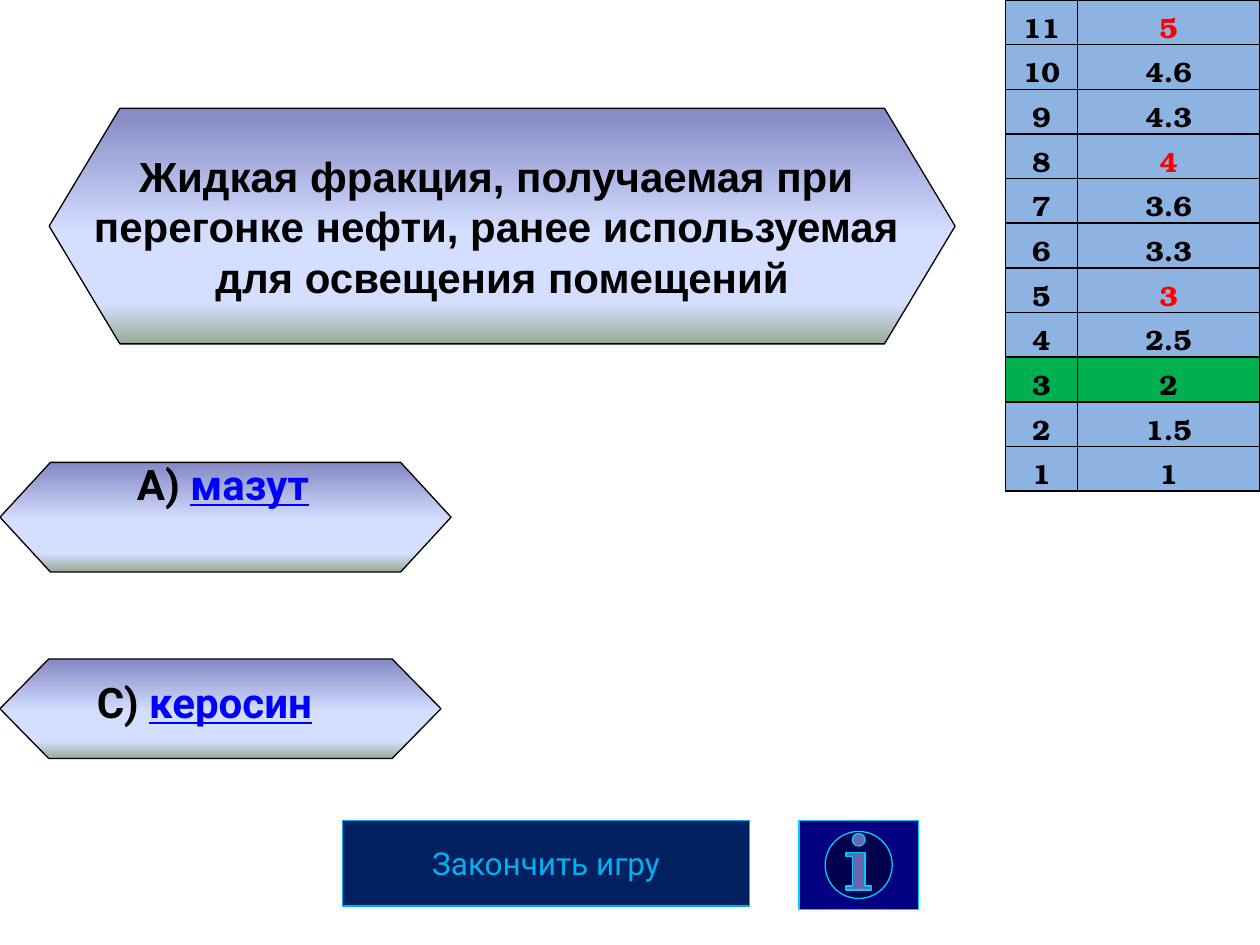
from pptx import Presentation
from pptx.dml.color import RGBColor
from pptx.enum.shapes import MSO_SHAPE as Preset
from pptx.enum.text import MSO_ANCHOR as Anchor, MSO_AUTO_SIZE as AutoSize, PP_ALIGN as Align
from pptx.oxml import parse_xml
from pptx.oxml.ns import nsdecls
from pptx.util import Inches, Pt

COLORS = {
    "black": "000000", "red": "FF0000", "answer": "0000FF",
    "cell": "8DB3E2", "current": "00B050",
    "navy": "002060", "sky": "00B0F0", "info": "000080", "info line": "00CCFF",
}
GRADIENT = [(0, "8488C4"), (53, "D4DEFF"), (83, "D4DEFF"), (100, "96AB94")]

QUESTION = [
    "Жидкая фракция, получаемая при ",
    "перегонке нефти, ранее используемая ",
    "для освещения помещений",
]
QUESTION_BOX = (0.39, 0.86, 7.19, 1.87)
# letter, answer, hexagon box, hexagon corner, text box, alignment
ANSWERS = [
    ("С) ", "керосин", (0, 5.23, 3.5, 0.79), 0.49, (0.67, 5.32, 2.99, 0.5), Align.LEFT),
    ("А) ", "мазут", (0, 3.67, 3.58, 0.87), 0.46, (0.35, 3.59, 2.84, 0.51), Align.CENTER),
]
SCORES = ["5", "4.6", "4.3", "4", "3.6", "3.3", "3", "2.5", "2", "1.5", "1"]
MILESTONES = {"5", "4", "3"}
CURRENT_LEVEL = 3
TABLE_BOX = (7.98, 0, 2.02, 3.9)
LEVEL_COLUMN = 0.57

presentation = Presentation()
presentation.slide_width, presentation.slide_height = Inches(10), Inches(7.5)
slide = presentation.slides.add_slide(presentation.slide_layouts[6])


def rgb(name):
    return RGBColor.from_string(COLORS[name])


def write(frame, paragraphs, font="Roboto", size=24, bold=True, align=Align.CENTER,
          line_spacing=None, space_after=None):
    """Fill a text frame; each paragraph is a list of (text, colour, underline)."""
    for index, runs in enumerate(paragraphs):
        paragraph = frame.add_paragraph() if index else frame.paragraphs[0]
        paragraph.alignment = align
        paragraph.line_spacing = line_spacing
        paragraph.space_after = space_after
        for text, color, underline in runs:
            run = paragraph.add_run()
            run.text = text
            run.font.name, run.font.size = font, Pt(size)
            run.font.bold, run.font.underline = bold, underline
            run.font.color.rgb = rgb(color)


def add_shape(preset, box, line, fill=None):
    shape = slide.shapes.add_shape(preset, *map(Inches, box))
    shape.shadow.inherit = False
    shape.line.color.rgb = rgb(line)
    shape.line.width = Pt(0.75)
    if fill:
        shape.fill.solid()
        shape.fill.fore_color.rgb = rgb(fill)
    shape.text_frame.word_wrap = False
    shape.text_frame.vertical_anchor = Anchor.MIDDLE
    return shape


def add_hexagon(box, corner):
    """Add a hexagon filled from top to bottom with GRADIENT."""
    hexagon = add_shape(Preset.HEXAGON, box, "black")
    hexagon.adjustments[0] = corner
    hexagon.adjustments[1] = 1.1547
    hexagon.fill.gradient()
    hexagon.fill.gradient_angle = 270
    stops = "".join(f'<a:gs pos="{share * 1000}"><a:srgbClr val="{color}"/></a:gs>'
                    for share, color in GRADIENT)
    old_stops = next(hexagon.element.iter("{*}gsLst"))
    old_stops.getparent().replace(
        old_stops, parse_xml(f'<a:gsLst {nsdecls("a")}>{stops}</a:gsLst>'))
    return hexagon


def add_borders(cell):
    properties = cell._tc.get_or_add_tcPr()
    for side in "LRTB":
        properties.append(parse_xml(
            f'<a:ln{side} {nsdecls("a")} w="12700"><a:solidFill>'
            f'<a:srgbClr val="{COLORS["black"]}"/></a:solidFill></a:ln{side}>'))


def add_score_table():
    table = slide.shapes.add_table(len(SCORES), 2, *map(Inches, TABLE_BOX)).table
    table.first_row = table.horz_banding = False
    table.columns[0].width = Inches(LEVEL_COLUMN)
    table.columns[1].width = Inches(TABLE_BOX[2] - LEVEL_COLUMN)
    for row, score in enumerate(SCORES):
        table.rows[row].height = Inches(TABLE_BOX[3] / len(SCORES))
        level = len(SCORES) - row
        score_color = "red" if score in MILESTONES else "black"
        for column, (text, color) in enumerate([(str(level), "black"), (score, score_color)]):
            cell = table.cell(row, column)
            add_borders(cell)
            cell.fill.solid()
            cell.fill.fore_color.rgb = rgb("current" if level == CURRENT_LEVEL else "cell")
            cell.margin_left = cell.margin_right = Inches(0.07)
            cell.margin_top = cell.margin_bottom = 0
            write(cell.text_frame, [[(text, color, False)]], font="TeX Gyre Bonum",
                  size=16, line_spacing=1.15, space_after=Pt(10))


for letter, answer, hexagon_box, corner, text_box, align in ANSWERS:
    add_hexagon(hexagon_box, corner)
    frame = slide.shapes.add_textbox(*map(Inches, text_box)).text_frame
    frame.word_wrap = True
    frame.auto_size = AutoSize.SHAPE_TO_FIT_TEXT
    write(frame, [[(letter, "black", False), (answer, "answer", True)]], align=align)

add_shape(Preset.ACTION_BUTTON_INFORMATION, (6.34, 6.51, 0.95, 0.71), "info line", "info")
finish_button = add_shape(Preset.ACTION_BUTTON_CUSTOM, (2.72, 6.51, 3.23, 0.68), "sky", "navy")
write(finish_button.text_frame, [[("Закончить игру", "sky", False)]], size=18, bold=False)

add_score_table()
question = add_hexagon(QUESTION_BOX, 0.3)
write(question.text_frame, [[(line, "black", False)] for line in QUESTION], font="Arial")

presentation.save("out.pptx")
